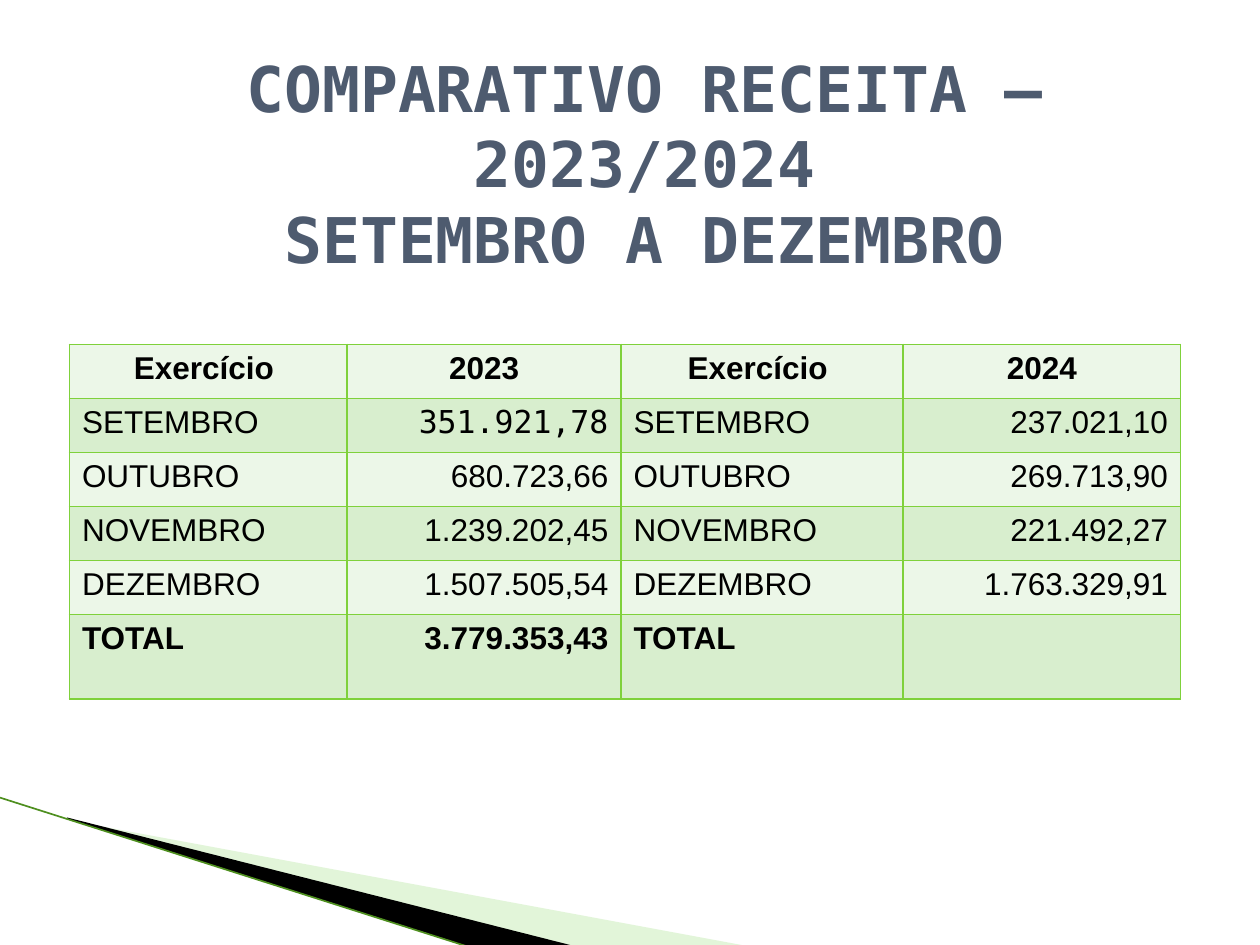
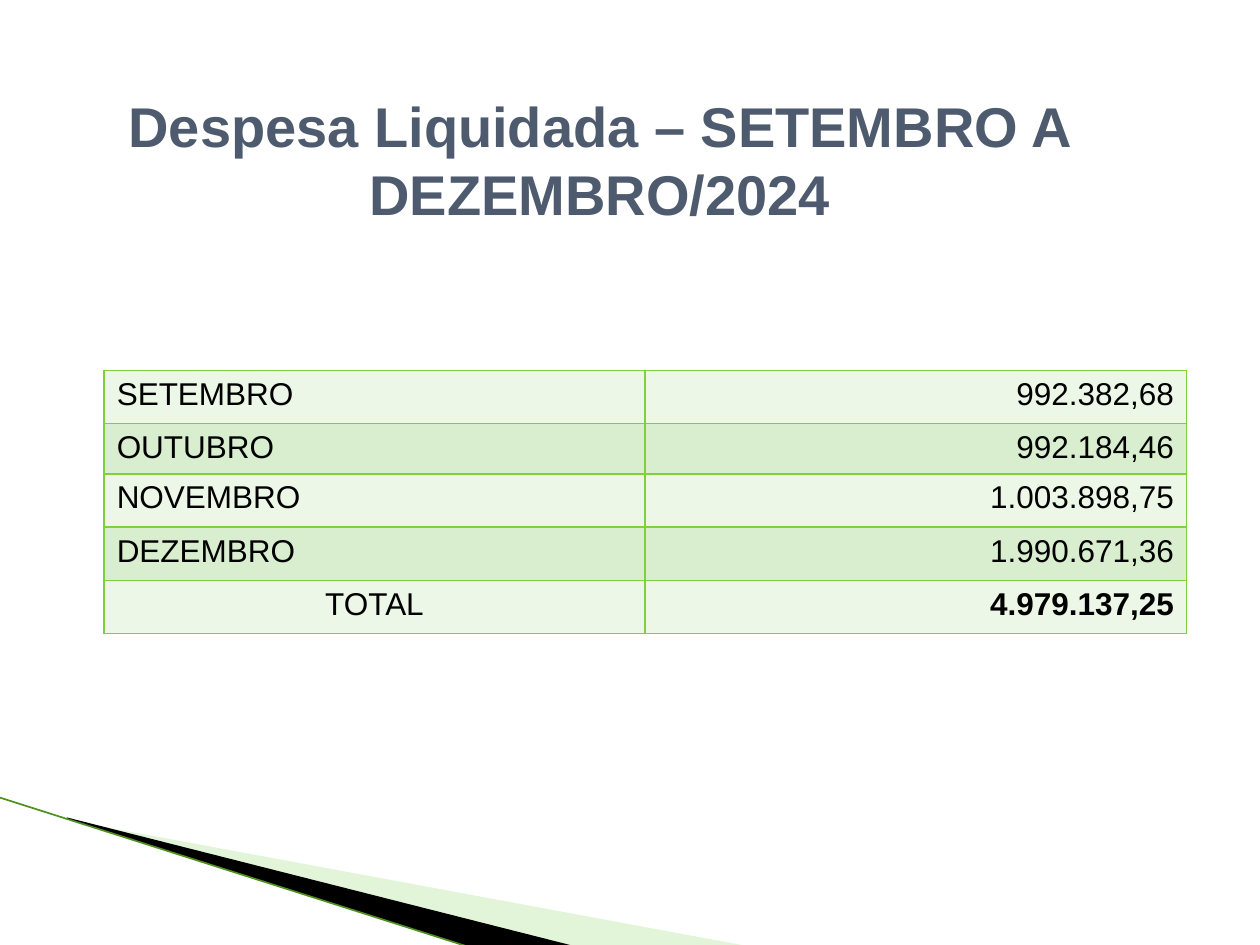
import collections

import pptx
import pptx.dml.color
import pptx.enum.shapes
import pptx.enum.text
import pptx.oxml
import pptx.oxml.ns
import pptx.util
from pptx.util import Cm

RGBColor = pptx.dml.color.RGBColor
Align = pptx.enum.text.PP_ALIGN
Anchor = pptx.enum.text.MSO_ANCHOR
Box = collections.namedtuple("Box", "left top width height")

WHITE = RGBColor(0xFF, 0xFF, 0xFF)
BLACK = RGBColor(0x00, 0x00, 0x00)
SLATE = RGBColor(0x4E, 0x5B, 0x6F)
GRID_GREEN = RGBColor(0x7F, 0xD1, 0x3B)
EDGE_GREEN = RGBColor(0x4E, 0x8F, 0x1F)
WEDGE_GREEN = RGBColor(0xB8, 0xE7, 0xA1)
ROW_FILLS = (RGBColor(0xEC, 0xF7, 0xE8), RGBColor(0xD8, 0xEE, 0xCE))

SANS = "Arial"
MONO = "DejaVu Sans Mono"
CORNER = Box(0, 16.08, 15.11, 3)

REVENUE = (
    ("Exercício ", "2023", "Exercício ", "2024"),
    ("SETEMBRO", "351.921,78", "SETEMBRO", "237.021,10"),
    ("OUTUBRO", "680.723,66", "OUTUBRO", "269.713,90"),
    ("NOVEMBRO", "1.239.202,45", "NOVEMBRO", "221.492,27"),
    ("DEZEMBRO", "1.507.505,54", "DEZEMBRO", "1.763.329,91"),
    ("TOTAL", "3.779.353,43", "TOTAL", ""),
)
EXPENSE = (
    ("SETEMBRO", "992.382,68"),
    ("OUTUBRO", "992.184,46"),
    ("NOVEMBRO", "1.003.898,75"),
    ("DEZEMBRO", "1.990.671,36"),
    ("TOTAL", "4.979.137,25"),
)


def write_text(frame, text, size=18, font=SANS, color=BLACK, bold=False, align=Align.LEFT):
    para = frame.paragraphs[0]
    para.alignment = align
    para.font.size = pptx.util.Pt(size)
    for index, line in enumerate(text.split("\n")):
        if index:
            para.add_line_break()
        span = para.add_run()
        span.text = line
        span.font.size = pptx.util.Pt(size)
        span.font.name = font
        span.font.bold = bold
        span.font.color.rgb = color


def add_title(page, box, text, anchor, **style):
    frame = page.shapes.add_textbox(*map(Cm, box)).text_frame
    frame.word_wrap = True
    frame.vertical_anchor = anchor
    write_text(frame, text, color=SLATE, bold=True, align=Align.CENTER, **style)


def add_wedge(page, box, points, color, opacity=100):
    corners = [(Cm(box.left + x), Cm(box.top + y)) for x, y in points]
    builder = page.shapes.build_freeform(*corners[0])
    builder.add_line_segments(corners[1:], close=True)
    wedge = builder.convert_to_shape()
    wedge.shadow.inherit = False
    wedge.line.fill.background()
    wedge.fill.solid()
    wedge.fill.fore_color.rgb = color
    if opacity < 100:
        tint = wedge.fill._xPr.find(".//" + pptx.oxml.ns.qn("a:srgbClr"))
        alpha = pptx.oxml.parse_xml(
            f'<a:alpha {pptx.oxml.ns.nsdecls("a")} val="{opacity * 1000}"/>')
        tint.append(alpha)


def add_corner(page, box):
    add_wedge(page, box, [(1.4, 0.46), (15.11, 3), (11.58, 3), (1.4, 0.43)], WEDGE_GREEN, 40)
    add_wedge(page, box, [(1.35, 0.4), (11.61, 3), (9.45, 3), (1.37, 0.43)], BLACK)
    edge = page.shapes.add_connector(
        pptx.enum.shapes.MSO_CONNECTOR.STRAIGHT,
        Cm(box.left), Cm(box.top), Cm(box.left + 9.42), Cm(box.top + box.height))
    edge.line.color.rgb = EDGE_GREEN
    edge.line.width = pptx.util.Pt(0.95)
    edge._element.spPr.append(
        pptx.oxml.parse_xml(f'<a:effectLst {pptx.oxml.ns.nsdecls("a")}/>'))


def draw_borders(cell):
    properties = cell._tc.get_or_add_tcPr()
    for side in "LRTB":
        properties.append(pptx.oxml.parse_xml(
            f'<a:ln{side} {pptx.oxml.ns.nsdecls("a")} w="12700"><a:solidFill>'
            f'<a:srgbClr val="{GRID_GREEN}"/></a:solidFill></a:ln{side}>'))


def add_month_table(page, box, rows, widths, heights, styles):
    table = page.shapes.add_table(len(rows), len(widths), *map(Cm, box)).table
    table.first_row = False
    table.horz_banding = False
    for column, width in zip(table.columns, widths):
        column.width = Cm(width)
    for row, height in zip(table.rows, heights):
        row.height = Cm(height)
    for r, values in enumerate(rows):
        for c, value in enumerate(values):
            cell = table.cell(r, c)
            draw_borders(cell)
            cell.fill.solid()
            cell.fill.fore_color.rgb = ROW_FILLS[r % 2]
            style = {"align": Align.RIGHT if c % 2 else Align.LEFT}
            style.update(styles.get((r, c), {}))
            write_text(cell.text_frame, value, **style)


def add_page(deck):
    page = deck.slides.add_slide(deck.slide_layouts[6])
    page.background.fill.solid()
    page.background.fill.fore_color.rgb = WHITE
    add_corner(page, CORNER)
    return page


def build_revenue(deck):
    page = add_page(deck)
    add_title(page, Box(2.9, 0.99, 20.19, 4.57),
              "COMPARATIVO RECEITA – 2023/2024\nSETEMBRO A DEZEMBRO",
              Anchor.MIDDLE, size=36, font=MONO)
    last = len(REVENUE) - 1
    styles = {(1, 1): {"font": MONO}}
    for c in range(4):
        styles[0, c] = {"bold": True, "align": Align.CENTER}
        styles[last, c] = {"bold": True}
    add_month_table(page, Box(1.4, 6.94, 22.4, 7.2), REVENUE,
                    (5.6, 5.52, 5.69, 5.59), [1.09] * last + [1.7], styles)


def build_expense(deck):
    page = add_page(deck)
    add_title(page, Box(1.3, 1.73, 21.59, 4.09),
              "Despesa Liquidada – SETEMBRO A DEZEMBRO/2024", Anchor.TOP, size=32)
    last = len(EXPENSE) - 1
    styles = {(last, 0): {"align": Align.CENTER}, (last, 1): {"bold": True}}
    add_month_table(page, Box(2.1, 7.47, 21.82, 5.27), EXPENSE,
                    (10.9, 10.92), (1.07, 0.9, 1.07, 1.07, 1.07), styles)


def main():
    deck = pptx.Presentation()
    deck.slide_width = Cm(25.4)
    deck.slide_height = Cm(19.05)
    build_revenue(deck)
    build_expense(deck)
    deck.save("out.pptx")


if __name__ == "__main__":
    main()
